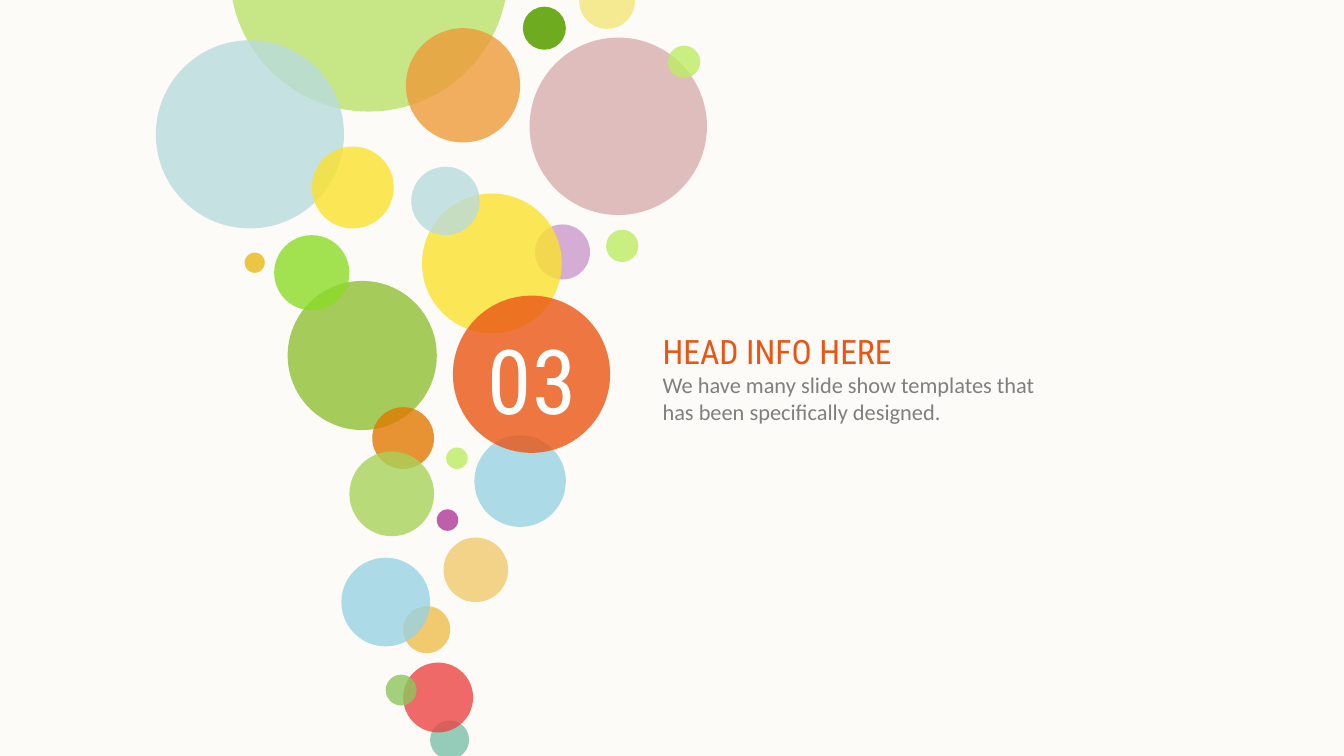
"""Build a section slide with a rising column of translucent bubbles."""
from lxml import etree
from pptx import Presentation
from pptx.dml.color import RGBColor
from pptx.enum.shapes import MSO_SHAPE
from pptx.enum.text import MSO_AUTO_SIZE, PP_ALIGN
from pptx.oxml.ns import qn
from pptx.util import Inches, Pt

OVAL = MSO_SHAPE.OVAL
GROW = MSO_AUTO_SIZE.SHAPE_TO_FIT_TEXT
LEFT, CENTER = PP_ALIGN.LEFT, PP_ALIGN.CENTER

SLIDE_WIDTH = Inches(10)
SLIDE_HEIGHT = SLIDE_WIDTH * 9 // 16
HEAD_FONT, BODY_FONT = "Roboto Condensed", "Calibri"

COLORS = {
    "paper": "FCFBF7", "white": "FFFFFF", "gray": "7F7F7F",
    "pale_lime": "BAE36B", "forest": "6EAB1F", "mist": "B9DBDD",
    "apricot": "ED9B38", "cream": "F5EA91", "rose": "D8AEAF",
    "olive": "A5CB5A", "lime": "BDED63", "lilac": "CB99CC",
    "yellow": "FBE22D", "bright_green": "8CDB27", "gold": "E9B915",
    "magenta": "B03896", "sand": "F0CA6C", "teal": "7BBFAA",
    "red": "EB4544", "leaf": "8DC65B", "sky": "98D2E3",
    "amber": "E27902", "moss": "A9D25A", "accent": "EA5514",
}
SOLID = {"forest", "cream", "olive"}

# Colour, left, top and diameter, as percentages of the slide's width
BUBBLES = [
    ("pale_lime", 17.1, -12.4, 20.7),
    ("forest", 38.9, 0.5, 3.2),
    ("mist", 11.6, 3, 14),
    ("apricot", 30.2, 2.1, 8.5),
    ("cream", 43.1, -2, 4.15),
    ("rose", 39.4, 2.8, 13.2),
    ("olive", 21.4, 20.9, 11.1),
    ("lime", 49.7, 3.4, 2.4),
    ("lime", 45.1, 17.1, 2.4),
    ("lilac", 39.8, 16.7, 4.1),
    ("yellow", 31.4, 14.4, 10.4),
    ("yellow", 23.2, 10.9, 6.1),
    ("bright_green", 20.4, 17.5, 5.6),
    ("gold", 18.2, 18.8, 1.5),
    ("lime", 33.2, 33.3, 1.6),
    ("magenta", 32.5, 37.9, 1.6),
    ("sand", 33, 40, 4.8),
    ("sand", 30, 45.1, 3.5, 100),
    ("teal", 32, 53.6, 2.9),
    ("red", 30, 49.3, 5.2),
    ("leaf", 28.7, 50.2, 2.3),
    ("sky", 25.4, 41.5, 6.6),
    ("mist", 30.6, 12.4, 5.1),
    ("sky", 35.3, 32.4, 6.8),
    ("amber", 27.7, 30.3, 4.6),
    ("moss", 26, 33.6, 6.3),
    ("accent", 33.7, 22, 11.7),
]


def share(percent):
    """Convert a percentage of the slide's width to a length."""
    return round(SLIDE_WIDTH * percent / 100)


def rgb(color):
    """Look up a named colour."""
    return RGBColor.from_string(COLORS[color])


def add_bubble(slide, color, left, top, diameter, opacity=80):
    """Draw one circle with the given opacity in percent."""
    size = share(diameter)
    bubble = slide.shapes.add_shape(OVAL, share(left), share(top), size, size)
    bubble.shadow.inherit = False
    bubble.line.fill.background()
    bubble.fill.solid()
    bubble.fill.fore_color.rgb = rgb(color)
    if color not in SOLID and opacity < 100:
        tint = bubble.element.spPr.find(qn("a:solidFill"))[0]
        etree.SubElement(tint, qn("a:alpha"), val=str(opacity * 1000))


def add_text_frame(slide, left, top, width, height):
    """Add a wrapping text box without margins and return its frame."""
    frame = slide.shapes.add_textbox(*map(share, (left, top, width, height))).text_frame
    frame.word_wrap = True
    frame.auto_size = GROW
    frame.margin_left = frame.margin_right = 0
    frame.margin_top = frame.margin_bottom = 0
    return frame


def write(paragraph, text, *, size, color, font=HEAD_FONT, align=LEFT):
    """Write formatted text into a paragraph."""
    paragraph.alignment = align
    run = paragraph.add_run()
    run.text = text
    run.font.name = font
    run.font.size = Pt(size)
    run.font.color.rgb = rgb(color)


def main():
    """Compose and save the slide."""
    deck = Presentation()
    deck.slide_width, deck.slide_height = SLIDE_WIDTH, SLIDE_HEIGHT
    slide = deck.slides.add_slide(deck.slide_layouts[6])
    slide.background.fill.solid()
    slide.background.fill.fore_color.rgb = rgb("paper")

    for bubble in BUBBLES:
        add_bubble(slide, *bubble)

    number = add_text_frame(slide, 35.6, 24.2, 8, 8.1)
    write(number.paragraphs[0], "03", size=48, color="white", align=CENTER)

    info = add_text_frame(slide, 49.3, 24.6, 30.4, 7.1)
    write(info.paragraphs[0], "HEAD INFO HERE", size=18, color="accent")
    write(info.add_paragraph(),
          "We have many slide show templates that has been specifically designed.",
          size=12, color="gray", font=BODY_FONT)

    deck.save("out.pptx")


if __name__ == "__main__":
    main()
